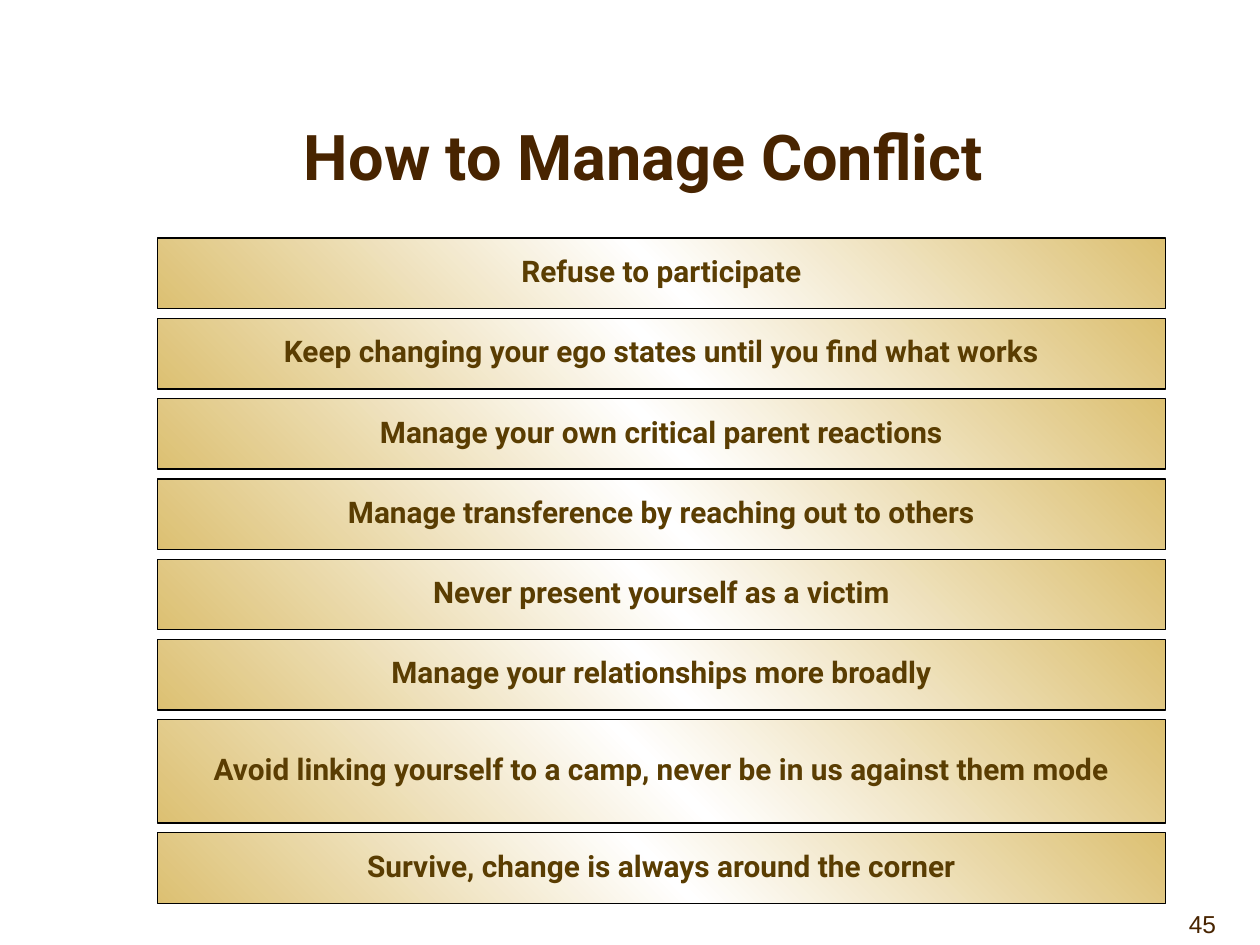
import copy
from dataclasses import dataclass

import pptx
import pptx.dml.color
import pptx.enum.shapes
import pptx.enum.text
import pptx.oxml.ns
import pptx.util

Inches = pptx.util.Inches
Pt = pptx.util.Pt
ALIGN = pptx.enum.text.PP_ALIGN
ANCHOR = pptx.enum.text.MSO_ANCHOR

COLORS = {
    "heading": "482400",
    "bar_text": "5A3D02",
    "gold": "DCC072",
    "white": "FFFFFF",
    "line": "000000",
}
BAR_LEFT, BAR_WIDTH = 1.25, 8
BARS_TOP, BARS_BOTTOM = 1.89, 7.17


@dataclass
class Bar:
    text: str
    height: float = 0.56


@dataclass
class Label:
    text: str
    left: float
    top: float
    width: float
    height: float
    font: str
    size: int
    bold: bool
    align: ALIGN


BARS = [
    Bar("Refuse to participate"),
    Bar("Keep changing your ego states until you find what works"),
    Bar("Manage your own critical parent reactions"),
    Bar("Manage transference by reaching out to others"),
    Bar("Never present yourself as a victim"),
    Bar("Manage your relationships more broadly"),
    Bar("Avoid linking yourself to a camp, never be in us against them mode", 0.82),
    Bar("Survive, change is always around the corner"),
]
LABELS = [
    Label("45", 7.67, 7, 2.08, 0.5, "Arial", 14, False, ALIGN.RIGHT),
    Label("How to Manage Conflict ", 0.92, 1.08, 8.5, 0.5, "Roboto", 36, True, ALIGN.CENTER),
]


def rgb(name: str) -> pptx.dml.color.RGBColor:
    return pptx.dml.color.RGBColor.from_string(COLORS[name])


def write(sp, text: str, font: str, size: int, bold: bool, color: str,
          align: ALIGN, anchor: ANCHOR):
    tf = sp.text_frame
    tf.word_wrap = True
    tf.vertical_anchor = anchor
    p = tf.paragraphs[0]
    p.alignment = align
    r = p.add_run()
    r.text = text
    r.font.name = font
    r.font.size = Pt(size)
    r.font.bold = bold
    r.font.color.rgb = rgb(color)
    return p


def fill_gold(sp) -> None:
    """Diagonal gradient: gold, white in the middle, gold."""
    sp.fill.gradient()
    sp.fill.gradient_angle = 45
    stops = sp._element.spPr.find(".//" + pptx.oxml.ns.qn("a:gsLst"))
    stops.append(copy.deepcopy(stops[-1]))
    names = ("gold", "white", "gold")
    for stop, name, position in zip(sp.fill.gradient_stops, names, (0, 0.5, 1)):
        stop.position = position
        stop.color.rgb = rgb(name)


def add_bar(slide, bar: Bar, top: float) -> None:
    sp = slide.shapes.add_shape(
        pptx.enum.shapes.MSO_SHAPE.RECTANGLE, Inches(BAR_LEFT), Inches(top),
        Inches(BAR_WIDTH), Inches(bar.height))
    sp.shadow.inherit = False
    fill_gold(sp)
    sp.line.color.rgb = rgb("line")
    sp.line.width = Pt(0.75)
    p = write(sp, bar.text, "Roboto", 17, True, "bar_text", ALIGN.CENTER, ANCHOR.MIDDLE)
    p.line_spacing = 0.85


def add_label(slide, label: Label) -> None:
    sp = slide.shapes.add_textbox(Inches(label.left), Inches(label.top),
                                  Inches(label.width), Inches(label.height))
    write(sp, label.text, label.font, label.size, label.bold, "heading",
          label.align, ANCHOR.BOTTOM)


def main() -> None:
    prs = pptx.Presentation()
    prs.slide_width, prs.slide_height = Inches(10), Inches(7.5)
    slide = prs.slides.add_slide(prs.slide_layouts[6])

    # Page number and title
    for label in LABELS:
        add_label(slide, label)

    # Stack of bars with equal gaps
    free = BARS_BOTTOM - BARS_TOP - sum(bar.height for bar in BARS)
    gap = free / (len(BARS) - 1)
    top = BARS_TOP
    for bar in BARS:
        add_bar(slide, bar, top)
        top += bar.height + gap

    prs.save("out.pptx")


if __name__ == "__main__":
    main()
